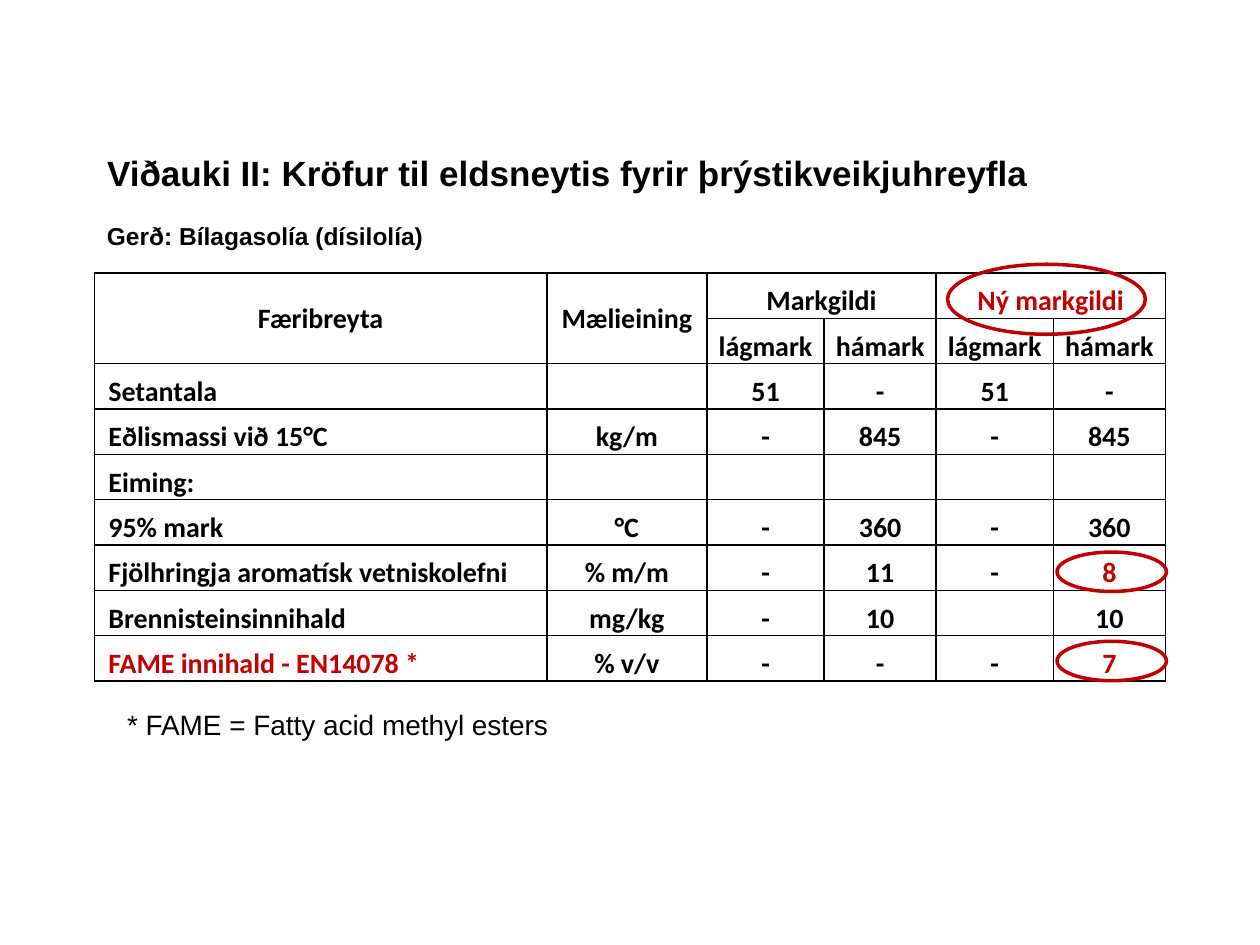
from dataclasses import dataclass

from lxml.etree import SubElement
from pptx import Presentation
from pptx.dml.color import RGBColor
from pptx.enum.shapes import MSO_SHAPE
from pptx.enum.text import MSO_ANCHOR, PP_ALIGN
from pptx.oxml.ns import qn
from pptx.util import Pt


@dataclass(frozen=True)
class Theme:
    ink: str = "000000"
    accent: str = "C00000"
    text_font: str = "Arial"
    table_font: str = "Calibri"
    title_size: int = 20
    subtitle_size: int = 14
    body_size: int = 16


theme = Theme()


def write(frame, text, size=theme.body_size, font=theme.text_font, color=theme.ink,
          bold=True, align=PP_ALIGN.LEFT, anchor=MSO_ANCHOR.TOP, wrap=True):
    frame.word_wrap = wrap
    frame.vertical_anchor = anchor
    para = frame.paragraphs[0]
    para.alignment = align
    span = para.add_run()
    span.text = text
    span.font.name = font
    span.font.size = Pt(size)
    span.font.bold = bold
    span.font.color.rgb = RGBColor.from_string(color)


def draw_borders(cell, color=theme.ink, width=1):
    properties = cell._tc.get_or_add_tcPr()
    for side in ("lnL", "lnR", "lnT", "lnB"):
        line = SubElement(properties, qn(f"a:{side}"), w=str(Pt(width)))
        fill = SubElement(line, qn("a:solidFill"))
        SubElement(fill, qn("a:srgbClr"), val=color)


deck = Presentation()
deck.slide_width, deck.slide_height = Pt(720), Pt(540)
page = deck.slides.add_slide(deck.slide_layouts[5])

# Headings and footnote
title = page.shapes.title
title.left, title.top, title.width, title.height = Pt(54), Pt(83), Pt(567), Pt(31.5)
write(title.text_frame, "Viðauki II: Kröfur til eldsneytis fyrir þrýstikveikjuhreyfla",
      size=theme.title_size)

subtitle = page.shapes.add_textbox(Pt(54), Pt(122.5), Pt(196), Pt(24.5))
write(subtitle.text_frame, "Gerð: Bílagasolía (dísilolía)", size=theme.subtitle_size, wrap=False)

footnote = page.shapes.add_textbox(Pt(65.5), Pt(400.5), Pt(258.5), Pt(26.5))
write(footnote.text_frame, "* FAME = Fatty acid methyl esters", bold=False, wrap=False)

# Table of limits
rows = [
    ["Færibreyta", "Mælieining", "Markgildi", "", "Ný markgildi", ""],
    ["", "", "lágmark", "hámark", "lágmark", "hámark"],
    ["Setantala", "", "51", "-", "51", "-"],
    ["Eðlismassi við 15°C", "kg/m", "-", "845", "-", "845"],
    ["Eiming:", "", "", "", "", ""],
    ["95% mark", "°C", "-", "360", "-", "360"],
    ["Fjölhringja aromatísk vetniskolefni", "% m/m", "-", "11", "-", "8"],
    ["Brennisteinsinnihald", "mg/kg", "-", "10", "", "10"],
    ["FAME innihald - EN14078 *", "% v/v", "-", "-", "-", "7"],
]
column_widths = [258.5, 91.5, 67, 64, 67, 64]
row_height = 25.92
header_rows = 2
changed_cells = {(0, 4), (6, 5), (8, 0), (8, 5)}
merges = [((0, 0), (1, 0)), ((0, 1), (1, 1)), ((0, 2), (0, 3)), ((0, 4), (0, 5))]

table = page.shapes.add_table(len(rows), len(column_widths), Pt(54), Pt(156),
                              Pt(sum(column_widths)), Pt(row_height * len(rows))).table
table.first_row = table.horz_banding = False
for column, width in zip(table.columns, column_widths):
    column.width = Pt(width)
for row in table.rows:
    row.height = Pt(row_height)
for first, last in merges:
    table.cell(*first).merge(table.cell(*last))

for r, texts in enumerate(rows):
    for c, text in enumerate(texts):
        cell = table.cell(r, c)
        is_label = c == 0 and r >= header_rows
        draw_borders(cell)
        cell.fill.background()
        cell.margin_left = Pt(8 if is_label else 0.7)
        cell.margin_right = cell.margin_top = Pt(0.7)
        cell.margin_bottom = Pt(0)
        spans_header = r == 0 and c < 2
        cell.vertical_anchor = MSO_ANCHOR.MIDDLE if spans_header else MSO_ANCHOR.BOTTOM
        if text:
            write(cell.text_frame, text, font=theme.table_font,
                  color=theme.accent if (r, c) in changed_cells else theme.ink,
                  align=PP_ALIGN.LEFT if is_label else PP_ALIGN.CENTER,
                  anchor=None, wrap=None)

# Rings around the new limits
rings = [(541.5, 151, 113, 40), (604, 315.5, 62.5, 22.5), (604, 366.5, 62.5, 22.5)]
for bounds in rings:
    ring = page.shapes.add_shape(MSO_SHAPE.OVAL, *map(Pt, bounds))
    ring.shadow.inherit = False
    ring.fill.background()
    ring.line.color.rgb = RGBColor.from_string(theme.accent)
    ring.line.width = Pt(2)

deck.save("out.pptx")
